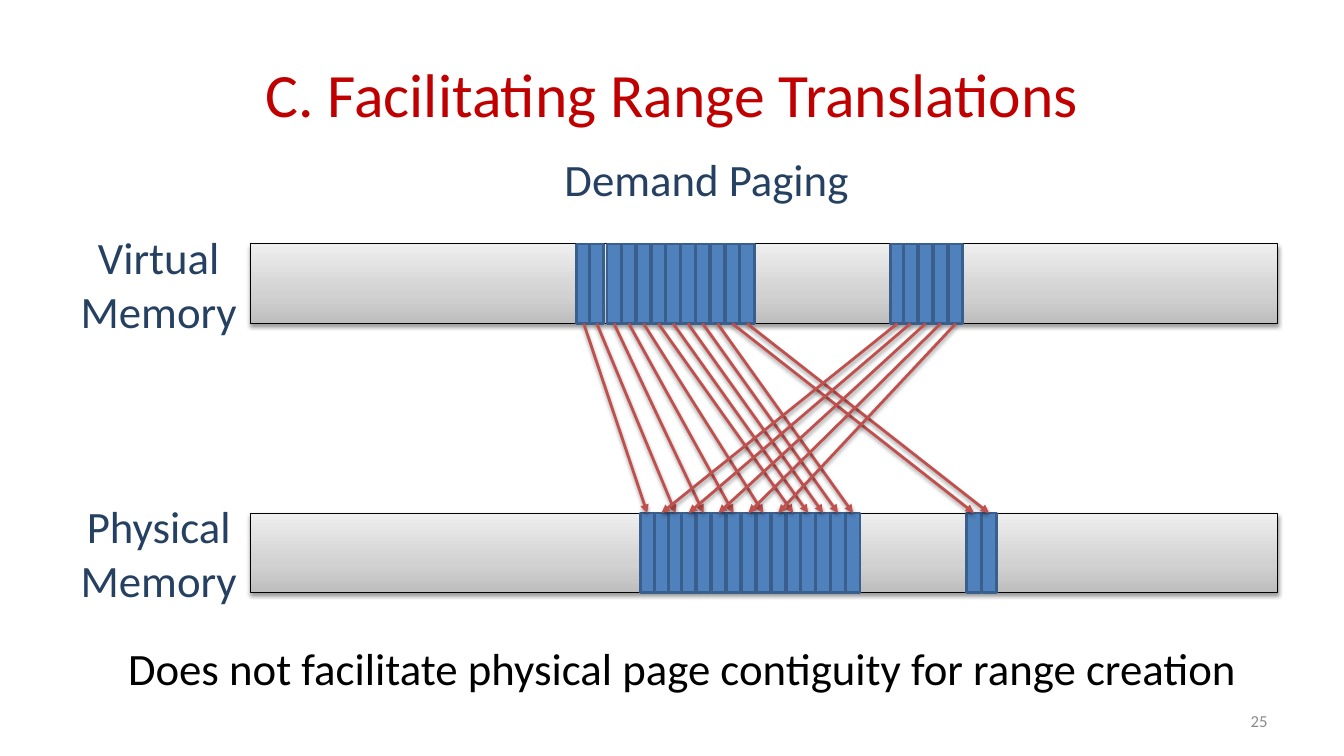
from dataclasses import dataclass

from lxml.etree import SubElement
from copy import deepcopy
from pptx import Presentation
from pptx.dml.color import RGBColor
from pptx.enum.shapes import MSO_CONNECTOR as Connector, MSO_SHAPE as Shape
from pptx.enum.text import MSO_ANCHOR as Anchor, PP_ALIGN as Align
from pptx.oxml.ns import qn
from pptx.util import Inches, Pt


@dataclass(frozen=True)
class Theme:
    font: str = "Calibri"
    title: str = "C00000"
    label: str = "254061"
    body: str = "000000"
    muted: str = "8C8C8C"
    page_fill: str = "4F81BD"
    page_line: str = "3A5F8C"
    arrow: str = "C0504D"
    bar_line: str = "000000"
    bar_stops: tuple = ((0, "BDBDBD"), (0.35, "D1D1D1"), (1, "EEEEEE"))
    title_size: int = 44
    text_size: int = 32
    number_size: int = 12


THEME = Theme()
WIDTH, HEIGHT = 13.33, 7.5
MARGIN = 0.67
BAR_LEFT, BAR_WIDTH, BAR_HEIGHT = 2.48, 10.19, 0.79
PAGE_WIDTH = 0.14
LABEL_RISE, LABEL_HEIGHT = 0.19, 1.18

TITLE = "C. Facilitating Range Translations"
SUBTITLE = "Demand Paging"
CONCLUSION = "Does not facilitate physical page contiguity for range creation "
NUMBER = "25"

# Each run of pages: left of the first, left of the last, count.
MEMORIES = {
    "Virtual Memory": (2.42, [(5.72, 5.85, 2), (6.02, 7.34, 10), (8.83, 8.96, 2), (9.11, 9.41, 3)]),
    "Physical Memory": (5.09, [(6.35, 6.63, 3), (6.76, 8.39, 12), (9.59, 9.74, 2)]),
}
FRAME_OF_PAGE = [0, 2, 4, 6, 8, *range(10, 17), 1, 3, 5, 7, 9]


def color(code):
    return RGBColor.from_string(code)


def add_text(slide, text, left, top, width, height, size=THEME.text_size,
             ink=THEME.label, align=Align.CENTER, anchor=Anchor.TOP):
    box = slide.shapes.add_textbox(*map(Inches, (left, top, width, height)))
    frame = box.text_frame
    frame.word_wrap = True
    frame.vertical_anchor = anchor
    para = frame.paragraphs[0]
    para.alignment = align
    span = para.add_run()
    span.text = text
    span.font.name = THEME.font
    span.font.size = Pt(size)
    span.font.color.rgb = color(ink)


def set_line(shape, ink, width):
    shape.line.color.rgb = color(ink)
    shape.line.width = Pt(width)


def cast_shadow(shape):
    effects = SubElement(shape._element.spPr, qn("a:effectLst"))
    shadow = SubElement(effects, qn("a:outerShdw"), blurRad=str(Pt(3.1)),
                        dist=str(Pt(1.6)), dir="5400000", rotWithShape="0")
    ink = SubElement(shadow, qn("a:srgbClr"), val="000000")
    SubElement(ink, qn("a:alpha"), val="38000")


def add_block(slide, left, top, width):
    return slide.shapes.add_shape(
        Shape.RECTANGLE, *map(Inches, (left, top, width, BAR_HEIGHT)))


def add_bar(slide, top):
    bar = add_block(slide, BAR_LEFT, top, BAR_WIDTH)
    bar.fill.gradient()
    bar.fill.gradient_angle = 90
    stops = bar._element.spPr.find(qn("a:gradFill")).find(qn("a:gsLst"))
    stops.append(deepcopy(stops[-1]))
    for stop, (position, ink) in zip(bar.fill.gradient_stops, THEME.bar_stops):
        stop.position = position
        stop.color.rgb = color(ink)
    set_line(bar, THEME.bar_line, 0.75)
    cast_shadow(bar)


def add_pages(slide, top, runs):
    pages = []
    for first, last, count in runs:
        step = (last - first) / (count - 1)
        for index in range(count):
            page = add_block(slide, first + index * step, top, PAGE_WIDTH)
            page.shadow.inherit = False
            page.fill.solid()
            page.fill.fore_color.rgb = color(THEME.page_fill)
            set_line(page, THEME.page_line, 2)
            pages.append(page)
    return pages


def add_arrow(slide, page, frame):
    arrow = slide.shapes.add_connector(Connector.STRAIGHT, 0, 0, 0, 0)
    arrow.begin_connect(page, 2)
    arrow.end_connect(frame, 0)
    set_line(arrow, THEME.arrow, 2)
    SubElement(arrow.line._get_or_add_ln(), qn("a:tailEnd"), type="triangle")
    cast_shadow(arrow)


def main():
    deck = Presentation()
    deck.slide_width, deck.slide_height = Inches(WIDTH), Inches(HEIGHT)
    slide = deck.slides.add_slide(deck.slide_layouts[6])

    add_text(slide, TITLE, MARGIN, 0.3, WIDTH - 2 * MARGIN, 1.25,
             size=THEME.title_size, ink=THEME.title, anchor=Anchor.MIDDLE)
    add_text(slide, SUBTITLE, 5.5, 1.46, 3.25, 0.64, align=Align.LEFT)

    rows = []
    for label, (top, runs) in MEMORIES.items():
        add_bar(slide, top)
        add_text(slide, label, MARGIN, top - LABEL_RISE, BAR_LEFT - MARGIN, LABEL_HEIGHT)
        rows.append(add_pages(slide, top, runs))

    virtual, physical = rows
    for page, target in zip(virtual, FRAME_OF_PAGE):
        add_arrow(slide, page, physical[target])

    add_text(slide, CONCLUSION, MARGIN, 6.31, 12.3, 0.64, ink=THEME.body)
    add_text(slide, NUMBER, 9.56, 6.95, 3.11, 0.4, size=THEME.number_size,
             ink=THEME.muted, align=Align.RIGHT, anchor=Anchor.MIDDLE)
    deck.save("out.pptx")


if __name__ == "__main__":
    main()
